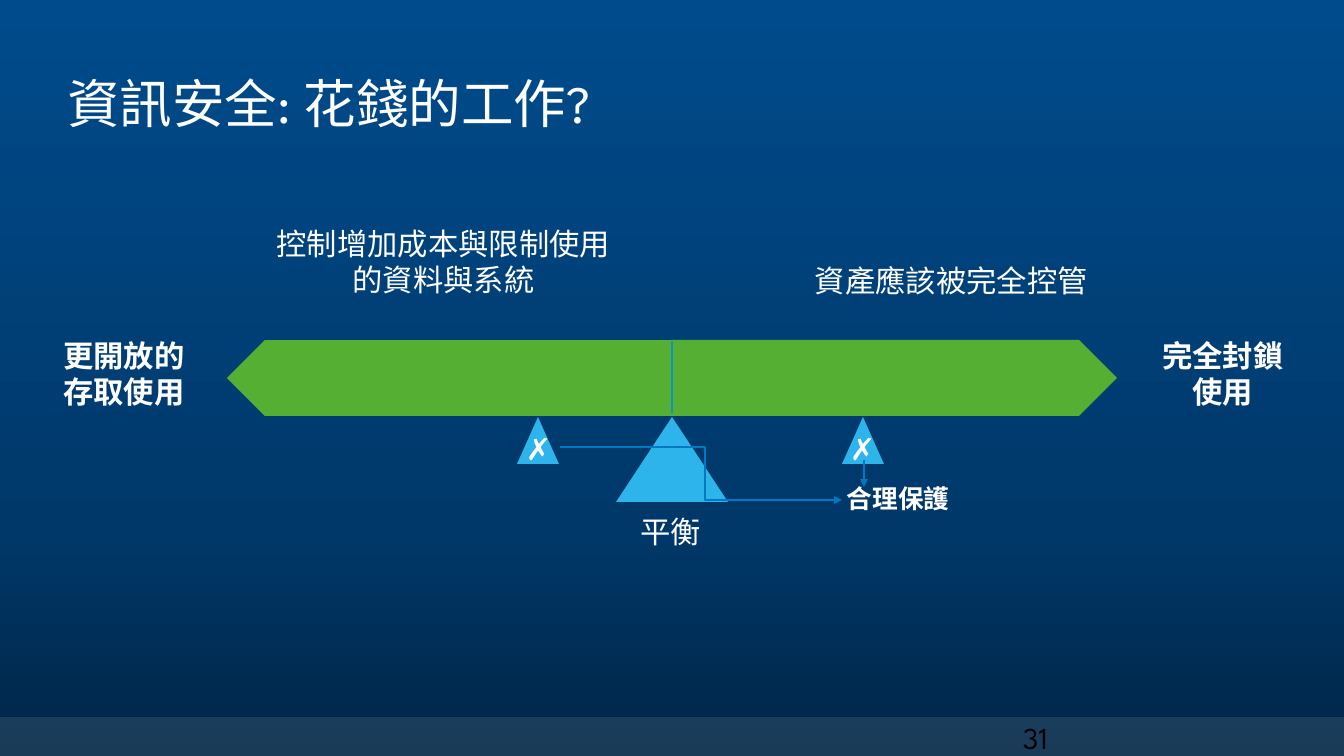
"""Build the slide on the balance between open access and full lockdown."""
import copy

import lxml.etree
import pptx
import pptx.dml.color
import pptx.enum.shapes
import pptx.enum.text
import pptx.oxml.ns
import pptx.util

PX = 914400 / 84
COLORS = {
    "top": "004B8C", "middle": "003869", "bottom": "002546",
    "white": "FFFFFF", "black": "000000", "green": "55AF32",
    "cyan": "2DB4EB", "arrow": "0078C3", "divider": "128EC0",
}
HEADING, BODY, SYMBOL = "League Spartan", "Cabin", "Arial"
SHAPE = pptx.enum.shapes.MSO_SHAPE
CONNECTOR = pptx.enum.shapes.MSO_CONNECTOR
ALIGN = pptx.enum.text.PP_ALIGN
AUTO_SIZE = pptx.enum.text.MSO_AUTO_SIZE
qn = pptx.oxml.ns.qn


def px(*lengths):
    return [pptx.util.Emu(round(length * PX)) for length in lengths]


def rgb(name):
    return pptx.dml.color.RGBColor.from_string(COLORS[name])


presentation = pptx.Presentation()
presentation.slide_width, presentation.slide_height = px(1344, 756)
slide = presentation.slides.add_slide(presentation.slide_layouts[5])

background = slide.background.fill
background.gradient()
background.gradient_angle = 270
stop_list = slide.element.xpath(".//a:gsLst")[0]
stop_list.append(copy.deepcopy(stop_list[-1]))
for stop, position, name in zip(background.gradient_stops, (0, 0.7, 1), ("top", "middle", "bottom")):
    stop.position = position
    stop.color.rgb = rgb(name)

title = slide.shapes.title
title.left, title.top, title.width, title.height = px(67, 27, 1210, 109)
frame = title.text_frame
frame.text = "資訊安全: 花錢的工作?"
frame.margin_left = frame.margin_right = frame.margin_top = frame.margin_bottom = 0
frame.vertical_anchor = pptx.enum.text.MSO_ANCHOR.BOTTOM
frame.auto_size = AUTO_SIZE.NONE
paragraph = frame.paragraphs[0]
paragraph.alignment = ALIGN.LEFT
paragraph.line_spacing = 0.95
paragraph.space_after = pptx.util.Pt(2)
paragraph.font.name = HEADING
paragraph.font.size = pptx.util.Pt(45)
paragraph.font.color.rgb = rgb("white")

shapes = [
    (SHAPE.RECTANGLE, 0, 717, 1344, 39, 0, "white"),
    (SHAPE.PENTAGON, 672, 340, 445, 76, 0, "green"),
    (SHAPE.PENTAGON, 227, 340, 445, 76, 180, "green"),
    (SHAPE.ISOSCELES_TRIANGLE, 616, 417, 112, 85, 0, "cyan"),
    (SHAPE.ISOSCELES_TRIANGLE, 517, 417, 42, 47, 0, "cyan"),
    (SHAPE.ISOSCELES_TRIANGLE, 842, 417, 42, 47, 0, "cyan"),
]
for kind, left, top, width, height, rotation, color in shapes:
    shape = slide.shapes.add_shape(kind, *px(left, top, width, height))
    shape.shadow.inherit = False
    shape.rotation = rotation
    shape.fill.solid()
    shape.fill.fore_color.rgb = rgb(color)
    shape.line.fill.background()
    if color == "white":
        fill_color = shape.fill._xPr.find(qn("a:solidFill"))[0]
        lxml.etree.SubElement(fill_color, qn("a:alpha"), val="10000")

connectors = [
    (CONNECTOR.ELBOW, 560, 447, 842, 500, "arrow", 2.25),
    (CONNECTOR.STRAIGHT, 864, 460, 864, 487, "arrow", 2.25),
    (CONNECTOR.STRAIGHT, 672, 341, 672, 413, "divider", 1),
]
for kind, left, top, right, bottom, color, weight in connectors:
    connector = slide.shapes.add_connector(kind, *px(left, top, right, bottom))
    connector.line.color.rgb = rgb(color)
    connector.line.width = pptx.util.Pt(weight)
    properties = connector.element.spPr
    lxml.etree.SubElement(properties, qn("a:effectLst"))
    if color == "arrow":
        lxml.etree.SubElement(properties.find(qn("a:ln")), qn("a:tailEnd"), type="triangle")
    if kind == CONNECTOR.ELBOW:
        guides = properties.find(qn("a:prstGeom")).find(qn("a:avLst"))
        lxml.etree.SubElement(guides, qn("a:gd"), name="adj1", fmla="val 51400")

labels = [
    (1010, 712, 313, 40, ["31"], HEADING, 26, False, ALIGN.LEFT, True, "black"),
    (834, 476, 133, 45, ["合理保護"], HEADING, 22, True, ALIGN.LEFT, False, "white"),
    (23, 330, 202, 87, ["更開放的", "存取使用"], BODY, 26, True, ALIGN.CENTER, True, "white"),
    (1122, 330, 202, 87, ["完全封鎖", "使用"], BODY, 26, True, ALIGN.CENTER, True, "white"),
    (627, 506, 88, 50, ["平衡"], HEADING, 26, False, ALIGN.CENTER, False, "white"),
    (798, 255, 307, 50, ["資產應該被完全控管"], BODY, 26, False, ALIGN.CENTER, True, "white"),
    (255, 218, 377, 87, ["控制增加成本與限制使用的資料與系統"], BODY, 26, False, ALIGN.CENTER, True, "white"),
    (513, 423, 46, 50, ["✗"], SYMBOL, 26, False, ALIGN.LEFT, False, "white"),
    (837, 423, 46, 50, ["✗"], SYMBOL, 26, False, ALIGN.LEFT, False, "white"),
]
for left, top, width, height, lines, font, size, bold, alignment, wrap, color in labels:
    frame = slide.shapes.add_textbox(*px(left, top, width, height)).text_frame
    frame.margin_left, frame.margin_right, frame.margin_top, frame.margin_bottom = px(13, 13, 7, 7)
    frame.word_wrap = wrap
    frame.auto_size = AUTO_SIZE.NONE if color == "black" else AUTO_SIZE.SHAPE_TO_FIT_TEXT
    frame.text = "\n".join(lines)
    for paragraph in frame.paragraphs:
        paragraph.alignment = alignment
        paragraph.font.name = font
        paragraph.font.size = pptx.util.Pt(size)
        paragraph.font.bold = bold
        paragraph.font.color.rgb = rgb(color)

presentation.save("out.pptx")
